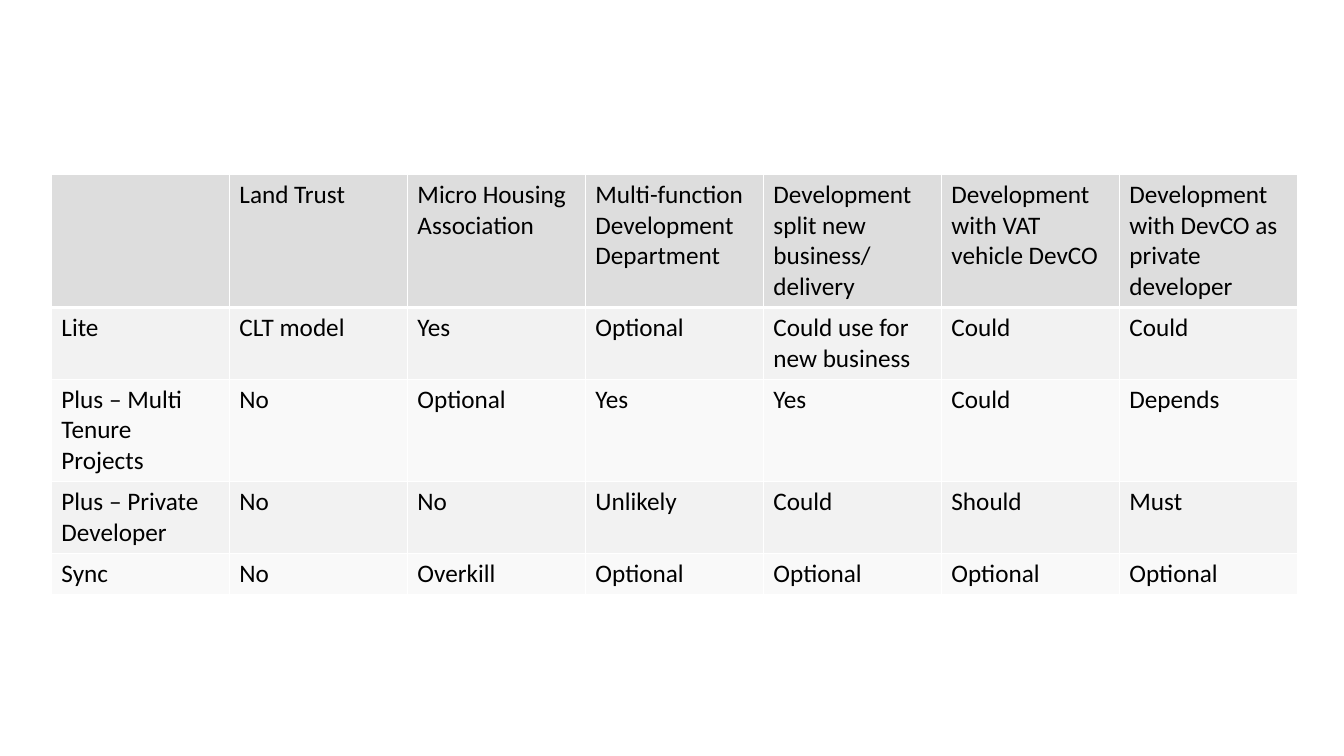
from dataclasses import dataclass

from lxml import etree
from pptx import Presentation
from pptx.dml.color import RGBColor
from pptx.oxml.ns import qn
from pptx.table import _Cell
from pptx.util import Emu, Pt

SCALE = 9144
SLIDE_WIDTH, SLIDE_HEIGHT = 1333, 750
TABLE_LEFT, TABLE_TOP, TABLE_WIDTH = 51, 173, 1236
ROW_HEIGHT = 41
BLANK_LAYOUT = 6

BLACK = RGBColor(0x00, 0x00, 0x00)
WHITE = RGBColor(0xFF, 0xFF, 0xFF)
HEADER_GREY = RGBColor(0xDD, 0xDD, 0xDD)
DARK_BAND = RGBColor(0xF2, 0xF2, 0xF2)
LIGHT_BAND = RGBColor(0xF9, 0xF9, 0xF9)

FONT_FORMAT = {"name": "Calibri", "size": Pt(18), "bold": False}


@dataclass(frozen=True)
class TableRow:
    texts: tuple[str, ...]
    fill: RGBColor
    top_border: int = 1
    bottom_border: int = 1


ROWS = (
    TableRow(
        (
            "",
            "Land Trust",
            "Micro Housing Association",
            "Multi-function Development Department",
            "Development split new business/ delivery",
            "Development with VAT vehicle DevCO",
            "Development with DevCO as private developer",
        ),
        HEADER_GREY,
        bottom_border=3,
    ),
    TableRow(
        ("Lite", "CLT model", "Yes", "Optional", "Could use for new business", "Could", "Could"),
        DARK_BAND,
        top_border=3,
    ),
    TableRow(
        ("Plus – Multi Tenure Projects", "No", "Optional", "Yes", "Yes", "Could", "Depends"),
        LIGHT_BAND,
    ),
    TableRow(
        ("Plus – Private Developer", "No", "No", "Unlikely", "Could", "Should", "Must"),
        DARK_BAND,
    ),
    TableRow(
        ("Sync", "No", "Overkill", "Optional", "Optional", "Optional", "Optional"),
        LIGHT_BAND,
    ),
)


def px(length: int) -> Emu:
    return Emu(length * SCALE)


def add_borders(cell: _Cell, row: TableRow) -> None:
    properties = cell._tc.get_or_add_tcPr()
    widths = {"L": 1, "R": 1, "T": row.top_border, "B": row.bottom_border}
    for side, width in widths.items():
        line = etree.SubElement(properties, qn(f"a:ln{side}"), w=str(Pt(width)))
        fill = etree.SubElement(line, qn("a:solidFill"))
        etree.SubElement(fill, qn("a:srgbClr"), val=str(WHITE))


def fill_cell(cell: _Cell, text: str, row: TableRow) -> None:
    add_borders(cell, row)
    cell.fill.solid()
    cell.fill.fore_color.rgb = row.fill
    cell.text = text
    font = cell.text_frame.paragraphs[0].font
    for attribute, value in FONT_FORMAT.items():
        setattr(font, attribute, value)
    font.color.rgb = BLACK


def main() -> None:
    presentation = Presentation()
    presentation.slide_width = px(SLIDE_WIDTH)
    presentation.slide_height = px(SLIDE_HEIGHT)
    slide = presentation.slides.add_slide(presentation.slide_layouts[BLANK_LAYOUT])
    table = slide.shapes.add_table(
        len(ROWS),
        len(ROWS[0].texts),
        px(TABLE_LEFT),
        px(TABLE_TOP),
        px(TABLE_WIDTH),
        px(ROW_HEIGHT * len(ROWS)),
    ).table
    for row_index, row in enumerate(ROWS):
        for column_index, text in enumerate(row.texts):
            fill_cell(table.cell(row_index, column_index), text, row)
    presentation.save("out.pptx")


if __name__ == "__main__":
    main()
